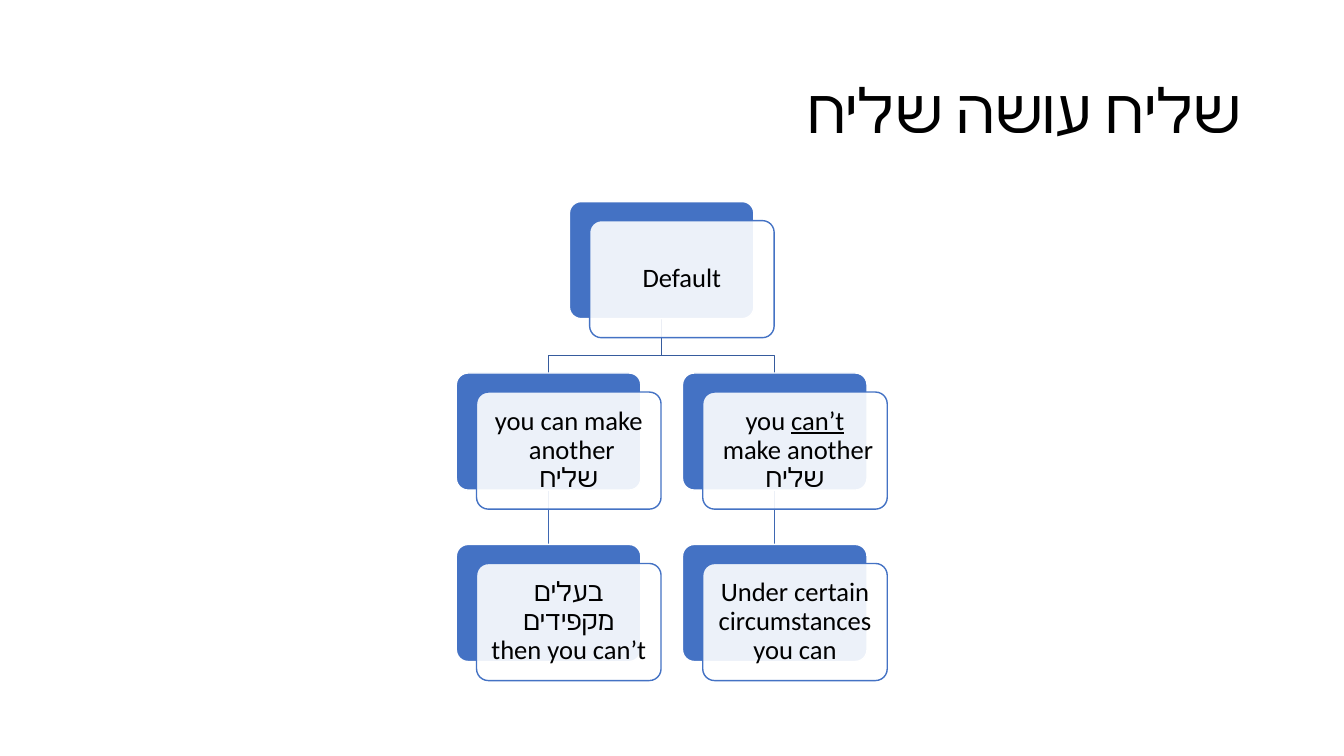
from dataclasses import dataclass

from lxml import etree
from pptx import Presentation
from pptx.dml.color import RGBColor
from pptx.enum.shapes import MSO_CONNECTOR, MSO_SHAPE
from pptx.enum.text import MSO_ANCHOR, PP_ALIGN
from pptx.oxml.ns import qn
from pptx.util import Cm, Pt

STRAIGHT = MSO_CONNECTOR.STRAIGHT
ROUNDED = MSO_SHAPE.ROUNDED_RECTANGLE
MIDDLE = MSO_ANCHOR.MIDDLE
CENTER = PP_ALIGN.CENTER
RIGHT = PP_ALIGN.RIGHT
TOP_SITE, BOTTOM_SITE = 0, 2


@dataclass(frozen=True)
class Theme:
    font: str = "Calibri"
    text: RGBColor = RGBColor(0x00, 0x00, 0x00)
    white: RGBColor = RGBColor(0xFF, 0xFF, 0xFF)
    accent: RGBColor = RGBColor(0x44, 0x72, 0xC4)
    branch: RGBColor = RGBColor(0x36, 0x5B, 0x9D)
    stem: RGBColor = RGBColor(0x3E, 0x67, 0xB2)
    title_size: int = 44
    card_size: int = 19
    line_width: int = 1
    line_spacing: float = 0.9
    card_opacity: int = 90


THEME = Theme()
CARD_WIDTH, CARD_HEIGHT = 4.65, 2.95
CARD_SHIFT_X, CARD_SHIFT_Y = 0.51, 0.48
TREE_LEFT, TREE_TOP = 11.5, 5.08
COLUMN_STEP, ROW_STEP = 5.7, 4.32
BEND_DROP = 0.93

CARDS = [
    ("default", 0.5, 0, [["Default"]]),
    ("can", 0, 1, [["you can make another "], ["שליח"]]),
    ("owner objects", 0, 2, [["בעלים מקפידים"], ["then you can’t"]]),
    ("cannot", 1, 1, [["you ", ("can’t", True), " make another "], ["שליח"]]),
    ("circumstances", 1, 2, [["Under certain circumstances you can"]]),
]
STEMS = [("cannot", "circumstances"), ("can", "owner objects")]


def card_position(column, row):
    return TREE_LEFT + column * COLUMN_STEP, TREE_TOP + row * ROW_STEP


def add_run(paragraph, text, size, underline=False):
    run = paragraph.add_run()
    run.text = text
    run.font.name = THEME.font
    run.font.size = Pt(size)
    run.font.color.rgb = THEME.text
    if underline:
        run.font.underline = True
    etree.SubElement(run.font._element, qn("a:cs"), typeface=THEME.font)


def write_text(shape, lines, size, alignment):
    frame = shape.text_frame
    frame.word_wrap = True
    frame.vertical_anchor = MIDDLE
    paragraph = frame.paragraphs[0]
    paragraph.alignment = alignment
    paragraph.line_spacing = THEME.line_spacing
    paragraph._p.get_or_add_pPr().set("rtl", "1")
    for index, line in enumerate(lines):
        if index:
            paragraph.add_line_break()
        for part in line:
            text, underline = part if isinstance(part, tuple) else (part, False)
            add_run(paragraph, text, size, underline)


def add_title(slide, text):
    box = slide.shapes.add_textbox(Cm(2.33), Cm(1.01), Cm(29.21), Cm(3.68))
    write_text(box, [[text]], THEME.title_size, RIGHT)


def add_rounded(slide, left, top, fill, line):
    shape = slide.shapes.add_shape(
        ROUNDED, Cm(left), Cm(top), Cm(CARD_WIDTH), Cm(CARD_HEIGHT)
    )
    shape.adjustments[0] = 0.1
    shape.shadow.inherit = False
    shape.fill.solid()
    shape.fill.fore_color.rgb = fill
    shape.line.color.rgb = line
    shape.line.width = Pt(THEME.line_width)
    return shape


def add_card(slide, column, row, lines):
    left, top = card_position(column, row)
    back = add_rounded(slide, left, top, THEME.accent, THEME.white)
    front = add_rounded(
        slide, left + CARD_SHIFT_X, top + CARD_SHIFT_Y, THEME.white, THEME.accent
    )
    color = front._element.spPr.find(qn("a:solidFill"))[0]
    etree.SubElement(color, qn("a:alpha"), val=str(THEME.card_opacity * 1000))
    frame = front.text_frame
    frame.margin_left = frame.margin_right = Cm(0.19)
    frame.margin_top = frame.margin_bottom = Cm(0.19)
    write_text(front, lines, THEME.card_size, CENTER)
    return back


def add_branch(slide, column):
    root_left, root_top = card_position(0.5, 0)
    child_left, child_top = card_position(column, 1)
    start_x, start_y = root_left + CARD_WIDTH / 2, root_top + CARD_HEIGHT
    end_x, bend_y = child_left + CARD_WIDTH / 2, start_y + BEND_DROP
    builder = slide.shapes.build_freeform(Cm(start_x), Cm(start_y))
    points = [(start_x, bend_y), (end_x, bend_y), (end_x, child_top)]
    builder.add_line_segments([(Cm(x), Cm(y)) for x, y in points], close=False)
    branch = builder.convert_to_shape()
    branch.shadow.inherit = False
    branch.fill.background()
    branch.line.color.rgb = THEME.branch
    branch.line.width = Pt(THEME.line_width)


def add_stem(slide):
    stem = slide.shapes.add_connector(STRAIGHT, 0, 0, 0, 0)
    stem.line.color.rgb = THEME.stem
    stem.line.width = Pt(THEME.line_width)
    etree.SubElement(stem._element.spPr, qn("a:effectLst"))
    return stem


def main():
    presentation = Presentation()
    presentation.slide_width = Cm(33.87)
    presentation.slide_height = Cm(19.05)
    slide = presentation.slides.add_slide(presentation.slide_layouts[6])

    add_title(slide, "שליח עושה שליח")
    stems = [add_stem(slide) for _ in STEMS]
    for column in (1, 0):
        add_branch(slide, column)
    cards = {
        name: add_card(slide, column, row, lines)
        for name, column, row, lines in CARDS
    }
    for stem, (parent, child) in zip(stems, STEMS):
        stem.begin_connect(cards[parent], BOTTOM_SITE)
        stem.end_connect(cards[child], TOP_SITE)

    presentation.save("out.pptx")


if __name__ == "__main__":
    main()
